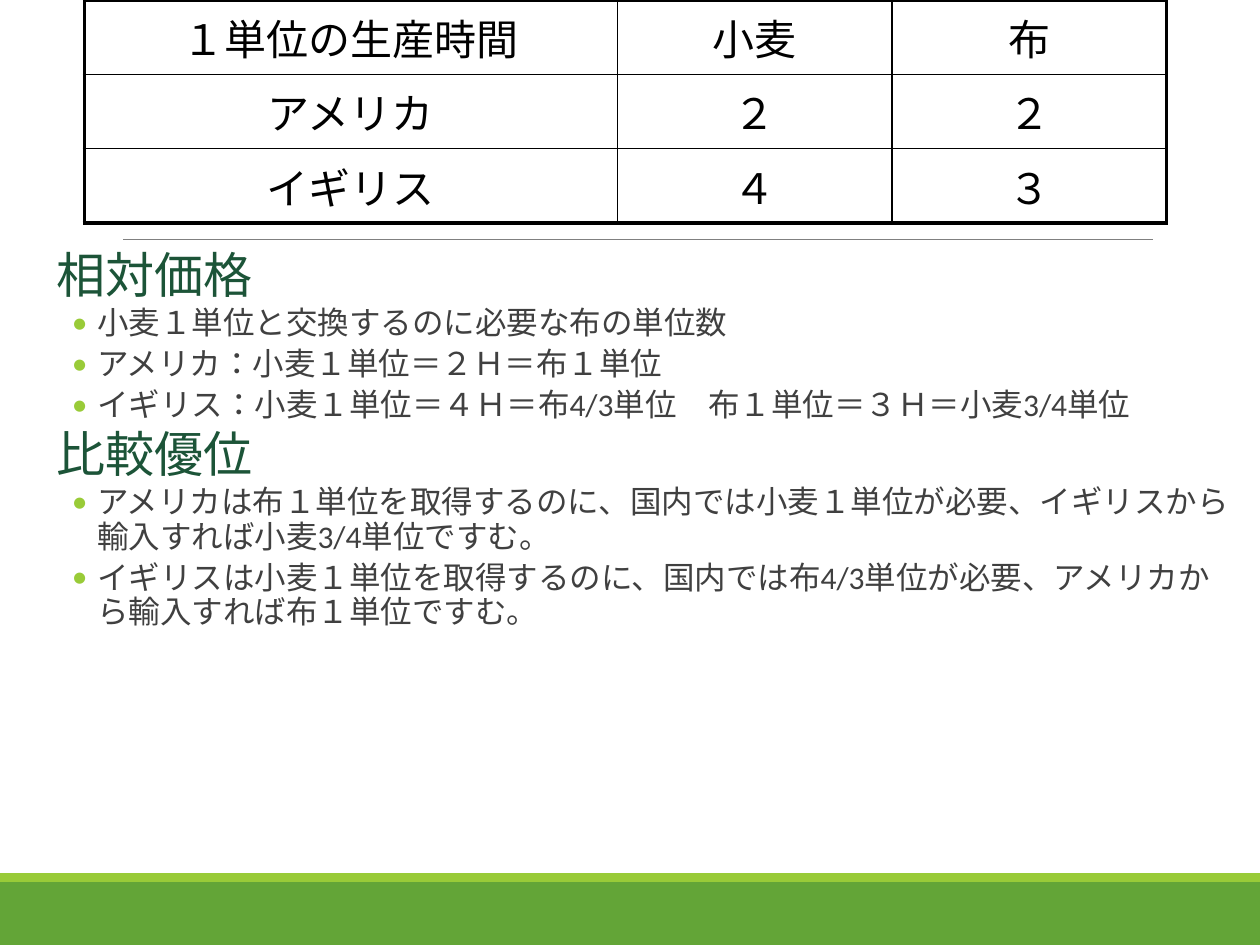
from dataclasses import dataclass

from lxml.etree import SubElement
from pptx import Presentation
from pptx.dml.color import RGBColor
from pptx.enum.lang import MSO_LANGUAGE_ID
from pptx.enum.shapes import MSO_CONNECTOR, MSO_SHAPE
from pptx.enum.text import MSO_ANCHOR, MSO_AUTO_SIZE, PP_ALIGN
from pptx.oxml.ns import qn
from pptx.util import Inches, Pt


@dataclass(frozen=True)
class Theme:
    green: str = "63A537"
    lime: str = "99CB38"
    rule: str = "808080"
    heading: str = "1C5438"
    text: str = "404040"
    black: str = "000000"
    body_font: str = "Calibri"
    table_font: str = "Roboto"
    heading_size: int = 28
    body_size: int = 18
    table_size: int = 24
    outer_border: float = 2.25
    inner_border: float = 1


THEME = Theme()

TABLE_ROWS = [
    ["１単位の生産時間", "小麦", "布"],
    ["アメリカ", "２", "２"],
    ["イギリス", "４", "３"],
]
COLUMN_WIDTHS = [4.23, 2.18, 2.18]
ROW_HEIGHT = 0.59

SECTIONS = {
    "相対価格": [
        "小麦１単位と交換するのに必要な布の単位数",
        "アメリカ：小麦１単位＝２Ｈ＝布１単位",
        "イギリス：小麦１単位＝４Ｈ＝布4/3単位　布１単位＝３Ｈ＝小麦3/4単位",
    ],
    "比較優位": [
        "アメリカは布１単位を取得するのに、国内では小麦１単位が必要、イギリスから輸入すれば小麦3/4単位ですむ。",
        "イギリスは小麦１単位を取得するのに、国内では布4/3単位が必要、アメリカから輸入すれば布１単位ですむ。",
    ],
}


def write_text(para, text, *, font, size, color, align=PP_ALIGN.LEFT):
    para.alignment = align
    span = para.add_run()
    span.text = text
    span.font.name = font
    span.font.size = Pt(size)
    span.font.color.rgb = RGBColor.from_string(color)
    span.font.language_id = MSO_LANGUAGE_ID.JAPANESE


def set_list_format(para, *, level, margin, indent, after, bullet=None):
    para.level = level
    para.line_spacing = 0.9
    para.space_before = Pt(0)
    para.space_after = Pt(after)
    properties = para._p.get_or_add_pPr()
    properties.set("marL", str(Inches(margin)))
    properties.set("indent", str(Inches(indent)))
    if bullet is None:
        SubElement(properties, qn("a:buNone"))
        return
    bullet_color = SubElement(properties, qn("a:buClr"))
    SubElement(bullet_color, qn("a:srgbClr"), val=THEME.lime)
    SubElement(properties, qn("a:buFont"), typeface=THEME.body_font)
    SubElement(properties, qn("a:buChar"), char=bullet)


def add_band(page, top, height, color):
    band = page.shapes.add_shape(
        MSO_SHAPE.RECTANGLE, 0, Inches(top), Inches(10), Inches(height)
    )
    band.shadow.inherit = False
    band.fill.solid()
    band.fill.fore_color.rgb = RGBColor.from_string(color)
    band.line.fill.background()


def add_rule(page, left, right, top):
    rule = page.shapes.add_connector(
        MSO_CONNECTOR.STRAIGHT, Inches(left), Inches(top), Inches(right), Inches(top)
    )
    rule.line.color.rgb = RGBColor.from_string(THEME.rule)
    rule.line.width = Pt(0.5)
    SubElement(rule._element.spPr, qn("a:effectLst"))


def fill_body(box):
    box.left, box.top = Inches(0.35), Inches(1.94)
    box.width, box.height = Inches(9.45), Inches(5.56)
    frame = box.text_frame
    frame.word_wrap = True
    frame.auto_size = MSO_AUTO_SIZE.NONE
    frame.vertical_anchor = MSO_ANCHOR.TOP
    frame.margin_left = frame.margin_right = 0
    frame.margin_top = frame.margin_bottom = Inches(0.05)
    para = frame.paragraphs[0]
    for heading, points in SECTIONS.items():
        if para is None:
            para = frame.add_paragraph()
        set_list_format(para, level=0, margin=0.1, indent=0, after=2)
        write_text(para, heading, font=THEME.body_font,
                   size=THEME.heading_size, color=THEME.heading)
        for point in points:
            para = frame.add_paragraph()
            set_list_format(para, level=1, margin=0.42, indent=-0.2, after=4, bullet="•")
            write_text(para, point, font=THEME.body_font,
                       size=THEME.body_size, color=THEME.text)
        para = None


def set_borders(cell, outer_sides):
    properties = cell._tc.get_or_add_tcPr()
    for side, is_outer in outer_sides.items():
        width = THEME.outer_border if is_outer else THEME.inner_border
        border = SubElement(properties, qn(f"a:ln{side}"), w=str(Pt(width)))
        fill = SubElement(border, qn("a:solidFill"))
        SubElement(fill, qn("a:srgbClr"), val=THEME.black)


def add_hours_table(page):
    row_count, column_count = len(TABLE_ROWS), len(COLUMN_WIDTHS)
    table = page.shapes.add_table(
        row_count, column_count, Inches(0.67), 0,
        Inches(sum(COLUMN_WIDTHS)), Inches(ROW_HEIGHT * row_count)
    ).table
    table.first_row = False
    table.horz_banding = False
    for column, width in zip(table.columns, COLUMN_WIDTHS):
        column.width = Inches(width)
    for row_index, texts in enumerate(TABLE_ROWS):
        table.rows[row_index].height = Inches(ROW_HEIGHT)
        for column_index, text in enumerate(texts):
            cell = table.cell(row_index, column_index)
            set_borders(cell, {
                "L": column_index == 0,
                "R": column_index == column_count - 1,
                "T": row_index == 0,
                "B": row_index == row_count - 1,
            })
            cell.fill.background()
            cell.vertical_anchor = MSO_ANCHOR.MIDDLE
            write_text(cell.text_frame.paragraphs[0], text, font=THEME.table_font,
                       size=THEME.table_size, color=THEME.black, align=PP_ALIGN.CENTER)


def main():
    deck = Presentation()
    deck.slide_width, deck.slide_height = Inches(10), Inches(7.5)
    page = deck.slides.add_slide(deck.slide_layouts[1])
    title = page.shapes.title._element
    title.getparent().remove(title)
    add_band(page, 7, 0.5, THEME.green)
    add_band(page, 6.93, 0.07, THEME.lime)
    add_rule(page, 0.98, 9.15, 1.9)
    fill_body(page.placeholders[1])
    add_hours_table(page)
    deck.save("out.pptx")


if __name__ == "__main__":
    main()
